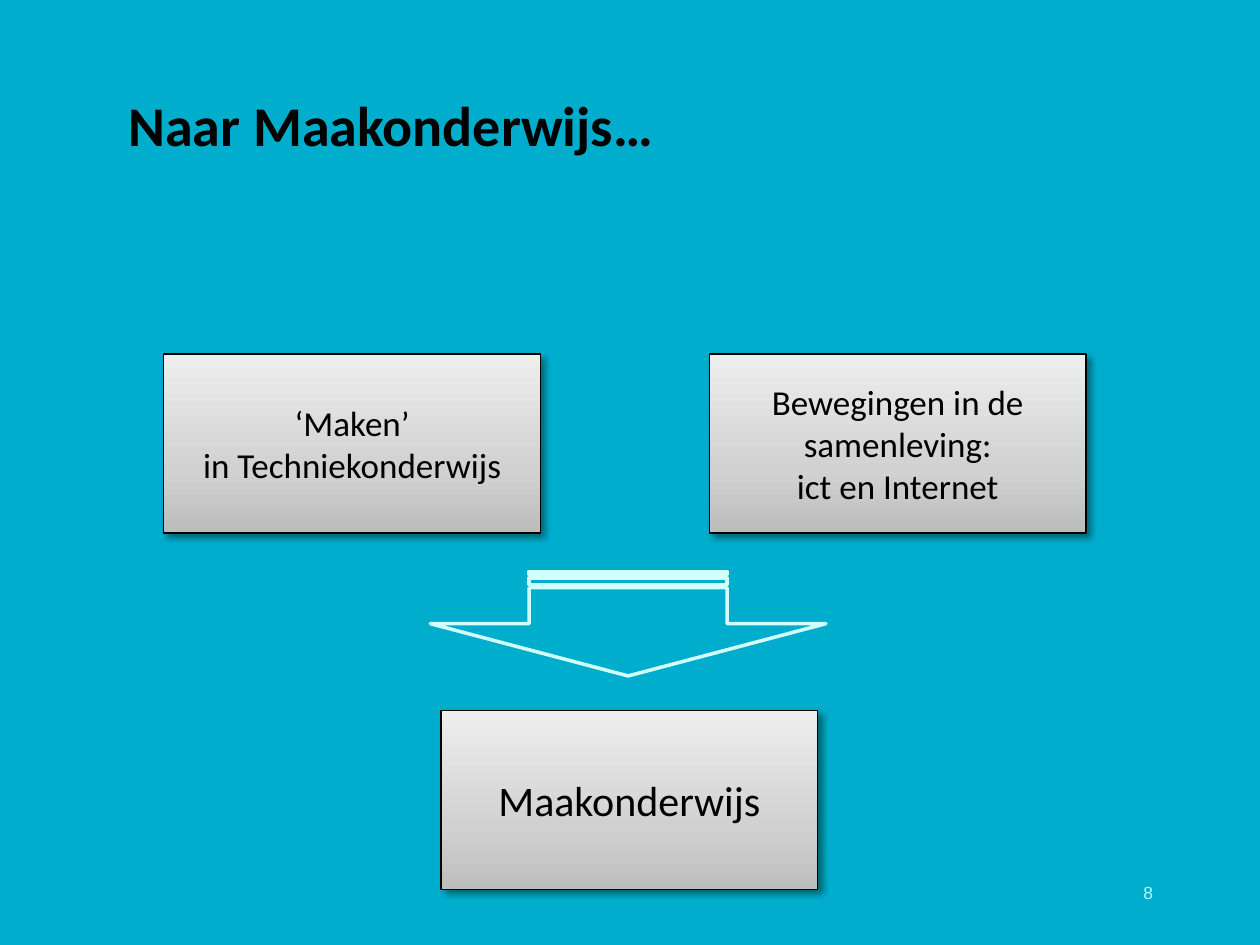
from copy import deepcopy

from lxml.etree import SubElement
from pptx import Presentation
from pptx.dml.color import RGBColor
from pptx.enum.shapes import MSO_SHAPE as Shape
from pptx.enum.text import MSO_ANCHOR as Anchor, MSO_AUTO_SIZE as AutoSize, PP_ALIGN as Align
from pptx.oxml.ns import qn
from pptx.util import Inches, Pt

BLACK = RGBColor(0x00, 0x00, 0x00)
TURQUOISE = RGBColor(0x00, 0xAD, 0xCD)
PALE_CYAN = RGBColor(0xD2, 0xFF, 0xFE)
NUMBER_CYAN = RGBColor(0xAA, 0xFF, 0xFD)
GREY_STOPS = (
    (0, RGBColor(0xBD, 0xBD, 0xBD)),
    (0.35, RGBColor(0xD1, 0xD1, 0xD1)),
    (1, RGBColor(0xEE, 0xEE, 0xEE)),
)
BOX_WIDTH, BOX_HEIGHT = 2.99, 1.42


def write(shape, *lines, size=20, font="Calibri", color=BLACK, bold=False,
          align=Align.CENTER, anchor=Anchor.MIDDLE):
    """Put each line in a paragraph of its own."""
    frame = shape.text_frame
    frame.text = "\n".join(lines)
    frame.word_wrap = True
    frame.vertical_anchor = anchor
    for para in frame.paragraphs:
        para.alignment = align
        for span in para.runs:
            span.font.name = font
            span.font.size = Pt(size)
            span.font.bold = bold
            span.font.color.rgb = color


def fill_grey(shape):
    """Give the shape a gradient, darkest at the bottom."""
    shape.fill.gradient()
    shape.fill.gradient_angle = 90
    stop_list = shape._element.spPr.find(qn("a:gradFill")).find(qn("a:gsLst"))
    stop_list.insert(1, deepcopy(stop_list[0]))
    for stop, (position, color) in zip(shape.fill.gradient_stops, GREY_STOPS):
        stop.position = position
        stop.color.rgb = color


def cast_shadow(shape):
    """Add a soft shadow to the lower right."""
    shape.shadow.inherit = False
    effects = shape._element.spPr.find(qn("a:effectLst"))
    shadow = SubElement(effects, qn("a:outerShdw"), blurRad=str(Pt(4)), dist=str(Pt(3)),
                        dir=str(45 * 60000), algn="tl", rotWithShape="0")
    color = SubElement(shadow, qn("a:srgbClr"), val=str(BLACK))
    SubElement(color, qn("a:alpha"), val="40000")


class SlideBuilder:
    def __init__(self, deck):
        self.page = deck.slides.add_slide(deck.slide_layouts[5])
        background = self.page.background.fill
        background.solid()
        background.fore_color.rgb = TURQUOISE

    def title(self, text):
        title = self.page.shapes.title
        title.left, title.top = Inches(0.92), Inches(0.66)
        title.width, title.height = Inches(8.57), Inches(0.64)
        write(title, text, size=32, bold=True, align=Align.LEFT, anchor=Anchor.BOTTOM)
        title.text_frame.auto_size = AutoSize.SHAPE_TO_FIT_TEXT

    def box(self, left, top, *lines, size=20):
        box = self.page.shapes.add_shape(
            Shape.RECTANGLE, Inches(left), Inches(top), Inches(BOX_WIDTH), Inches(BOX_HEIGHT))
        fill_grey(box)
        box.line.color.rgb = BLACK
        box.line.width = Pt(0.75)
        cast_shadow(box)
        write(box, *lines, size=size)

    def down_arrow(self, left, top, width, height):
        """Place a right arrow; the frame is given before its quarter turn."""
        arrow = self.page.shapes.add_shape(
            Shape.STRIPED_RIGHT_ARROW, Inches(left), Inches(top), Inches(width), Inches(height))
        arrow.rotation = 90
        arrow.shadow.inherit = False
        arrow.fill.solid()
        arrow.fill.fore_color.rgb = TURQUOISE
        arrow.line.color.rgb = PALE_CYAN
        arrow.line.width = Pt(2)

    def page_number(self, number):
        box = self.page.shapes.add_textbox(Inches(7.17), Inches(6.83), Inches(2.08), Inches(0.5))
        write(box, str(number), size=10, font="Arial", color=NUMBER_CYAN, align=Align.RIGHT)


def main():
    deck = Presentation()
    deck.slide_width, deck.slide_height = Inches(10), Inches(7.5)
    slide = SlideBuilder(deck)
    slide.title("Naar Maakonderwijs…")
    slide.page_number(8)
    slide.box(1.3, 2.81, "‘Maken’", "in Techniekonderwijs")
    slide.box(5.63, 2.81, "Bewegingen in de", "samenleving:", "ict en Internet")
    slide.box(3.5, 5.64, "Maakonderwijs", size=24)
    slide.down_arrow(4.57, 3.38, 0.83, 3.14)
    deck.save("out.pptx")


if __name__ == "__main__":
    main()
